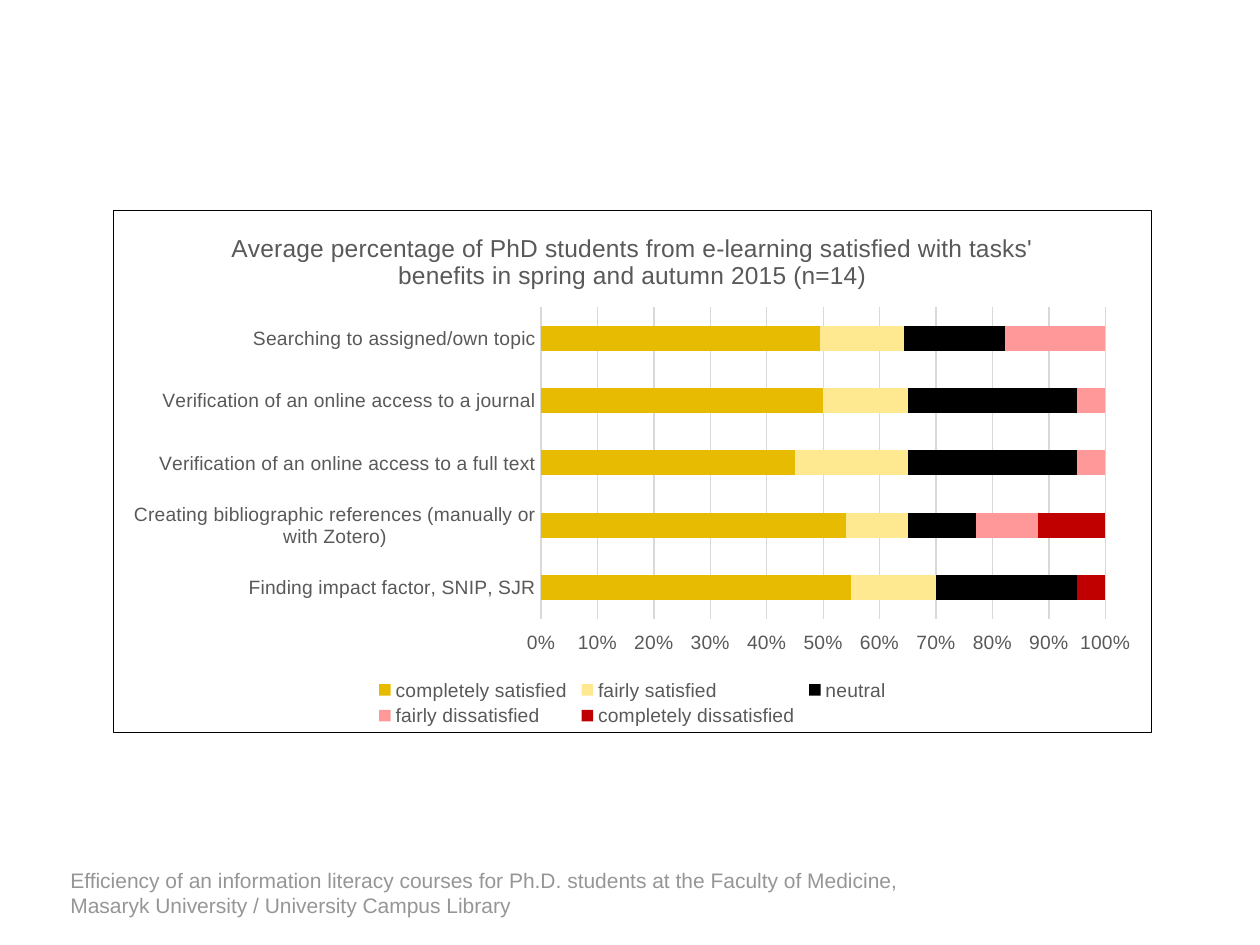
from dataclasses import dataclass

from lxml import etree
from pptx import Presentation
from pptx.chart.data import CategoryChartData
from pptx.dml.color import RGBColor
from pptx.enum.chart import (XL_AXIS_CROSSES, XL_CHART_TYPE, XL_LEGEND_POSITION,
                             XL_TICK_LABEL_POSITION, XL_TICK_MARK)
from pptx.enum.text import MSO_ANCHOR
from pptx.oxml import parse_xml
from pptx.oxml.ns import nsdecls, qn
from pptx.util import Pt

STACKED_100 = XL_CHART_TYPE.BAR_STACKED_100
AT_MAXIMUM = XL_AXIS_CROSSES.MAXIMUM
LEGEND_BOTTOM = XL_LEGEND_POSITION.BOTTOM
LABELS_HIGH = XL_TICK_LABEL_POSITION.HIGH
NO_TICKS = XL_TICK_MARK.NONE
ANCHOR_BOTTOM = MSO_ANCHOR.BOTTOM

EMU_PER_PX = 914400 / 126


@dataclass(frozen=True)
class Theme:
    font: str = "Arial"
    text: str = "595959"
    grid: str = "D9D9D9"
    border: str = "000000"
    footer: str = "969696"
    title_size: int = 14
    footer_size: int = 12
    label_size: int = 11
    line_width: float = 0.75


@dataclass(frozen=True)
class Box:
    left: int
    top: int
    width: int
    height: int

    def emu(self) -> list[int]:
        return [px(v) for v in (self.left, self.top, self.width, self.height)]


@dataclass(frozen=True)
class Rating:
    name: str
    color: str
    shares: tuple[int, ...]


THEME = Theme()
CHART_BOX = Box(113, 210, 1039, 523)
PLOT_BOX = Box(541, 307, 565, 312)
LEGEND_BOX = Box(371, 676, 523, 55)
FOOTER_BOX = Box(58, 861, 869, 63)

CHART_TITLE = ("Average percentage of PhD students from e-learning satisfied with tasks' "
               "benefits in spring and autumn 2015 (n=14)")
FOOTER = ("Efficiency of an information literacy courses for Ph.D. students at the "
          "Faculty of Medicine, Masaryk University / University Campus Library")
TASKS = (
    "Searching to assigned/own topic",
    "Verification of an online access to a journal",
    "Verification of an online access to a full text",
    "Creating bibliographic references (manually or with Zotero)",
    "Finding impact factor, SNIP, SJR",
)
RATINGS = (
    Rating("completely satisfied", "E7BB01", (50, 50, 45, 54, 55)),
    Rating("fairly satisfied", "FFE990", (15, 15, 20, 11, 15)),
    Rating("neutral", "000000", (18, 30, 30, 12, 25)),
    Rating("fairly dissatisfied", "FF9999", (18, 5, 5, 11, 0)),
    Rating("completely dissatisfied", "C00000", (0, 0, 0, 12, 5)),
)


def px(value: int) -> int:
    return round(value * EMU_PER_PX)


def style_font(font, size: int, color: str) -> None:
    formats = {"name": THEME.font, "size": Pt(size), "bold": False}
    for key, value in formats.items():
        setattr(font, key, value)
    font.color.rgb = RGBColor.from_string(color)


def style_line(line, color: str) -> None:
    line.color.rgb = RGBColor.from_string(color)
    line.width = Pt(THEME.line_width)


def place_in_chart(parent, box: Box, index: int, inner: bool = False) -> None:
    """Give a chart part a fixed place, as fractions of the chart area."""
    for old in parent.findall(qn("c:layout")):
        parent.remove(old)
    layout = parse_xml(f"<c:layout {nsdecls('c')}><c:manualLayout/></c:layout>")
    values = {"layoutTarget": "inner"} if inner else {}
    values |= {
        "xMode": "edge",
        "yMode": "edge",
        "x": round((box.left - CHART_BOX.left) / CHART_BOX.width, 4),
        "y": round((box.top - CHART_BOX.top) / CHART_BOX.height, 4),
        "w": round(box.width / CHART_BOX.width, 4),
        "h": round(box.height / CHART_BOX.height, 4),
    }
    for tag, value in values.items():
        etree.SubElement(layout[0], qn(f"c:{tag}")).set("val", str(value))
    parent.insert(index, layout)


def add_border(chart_space) -> None:
    border = parse_xml(
        f"<c:spPr {nsdecls('c', 'a')}><a:noFill/><a:ln w='{Pt(THEME.line_width)}'>"
        f"<a:solidFill><a:srgbClr val='{THEME.border}'/></a:solidFill></a:ln></c:spPr>")
    chart_space.find(qn("c:chart")).addnext(border)


def format_axes(chart) -> None:
    tasks, shares = chart.category_axis, chart.value_axis
    for axis in (tasks, shares):
        axis.major_tick_mark = axis.minor_tick_mark = NO_TICKS
        style_font(axis.tick_labels.font, THEME.label_size, THEME.text)

    # First task on top, percentages below the last one
    tasks.reverse_order = True
    tasks.crosses = AT_MAXIMUM
    tasks.has_major_gridlines = False
    style_line(tasks.format.line, THEME.grid)

    scale = {"minimum_scale": 0, "maximum_scale": 1, "major_unit": 0.1,
             "has_major_gridlines": True, "tick_label_position": LABELS_HIGH}
    for key, value in scale.items():
        setattr(shares, key, value)
    shares.tick_labels.number_format = "0%"
    shares.tick_labels.number_format_is_linked = False
    shares.format.line.fill.background()
    style_line(shares.major_gridlines.format.line, THEME.grid)


def add_satisfaction_chart(slide) -> None:
    data = CategoryChartData(number_format="0")
    data.categories = TASKS
    for rating in RATINGS:
        data.add_series(rating.name, rating.shares)
    chart = slide.shapes.add_chart(STACKED_100, *CHART_BOX.emu(), data).chart
    style_font(chart.font, THEME.label_size, THEME.text)
    add_border(chart.element)

    # Title
    chart.has_title = True
    chart.chart_title.include_in_layout = False
    title = chart.chart_title.text_frame
    title.text = CHART_TITLE
    style_font(title.paragraphs[0].runs[0].font, THEME.title_size, THEME.text)

    # Bars
    plot = chart.plots[0]
    for key, value in {"gap_width": 150, "overlap": 100, "vary_by_categories": False}.items():
        setattr(plot, key, value)
    for series, rating in zip(plot.series, RATINGS):
        series.format.fill.solid()
        series.format.fill.fore_color.rgb = RGBColor.from_string(rating.color)
    format_axes(chart)
    place_in_chart(chart.element.find(".//" + qn("c:plotArea")), PLOT_BOX, 0, inner=True)

    # Legend
    chart.has_legend = True
    chart.legend.position = LEGEND_BOTTOM
    chart.legend.include_in_layout = False
    style_font(chart.legend.font, THEME.label_size, THEME.text)
    place_in_chart(chart.element.find(".//" + qn("c:legend")), LEGEND_BOX, 1)


def add_footer(slide) -> None:
    frame = slide.shapes.add_textbox(*FOOTER_BOX.emu()).text_frame
    frame.word_wrap = True
    frame.vertical_anchor = ANCHOR_BOTTOM
    frame.text = FOOTER
    style_font(frame.paragraphs[0].runs[0].font, THEME.footer_size, THEME.footer)


def main() -> None:
    deck = Presentation()
    deck.slide_width, deck.slide_height = px(1260), px(945)
    slide = deck.slides.add_slide(deck.slide_layouts[6])
    add_footer(slide)
    add_satisfaction_chart(slide)
    deck.save("out.pptx")


if __name__ == "__main__":
    main()
